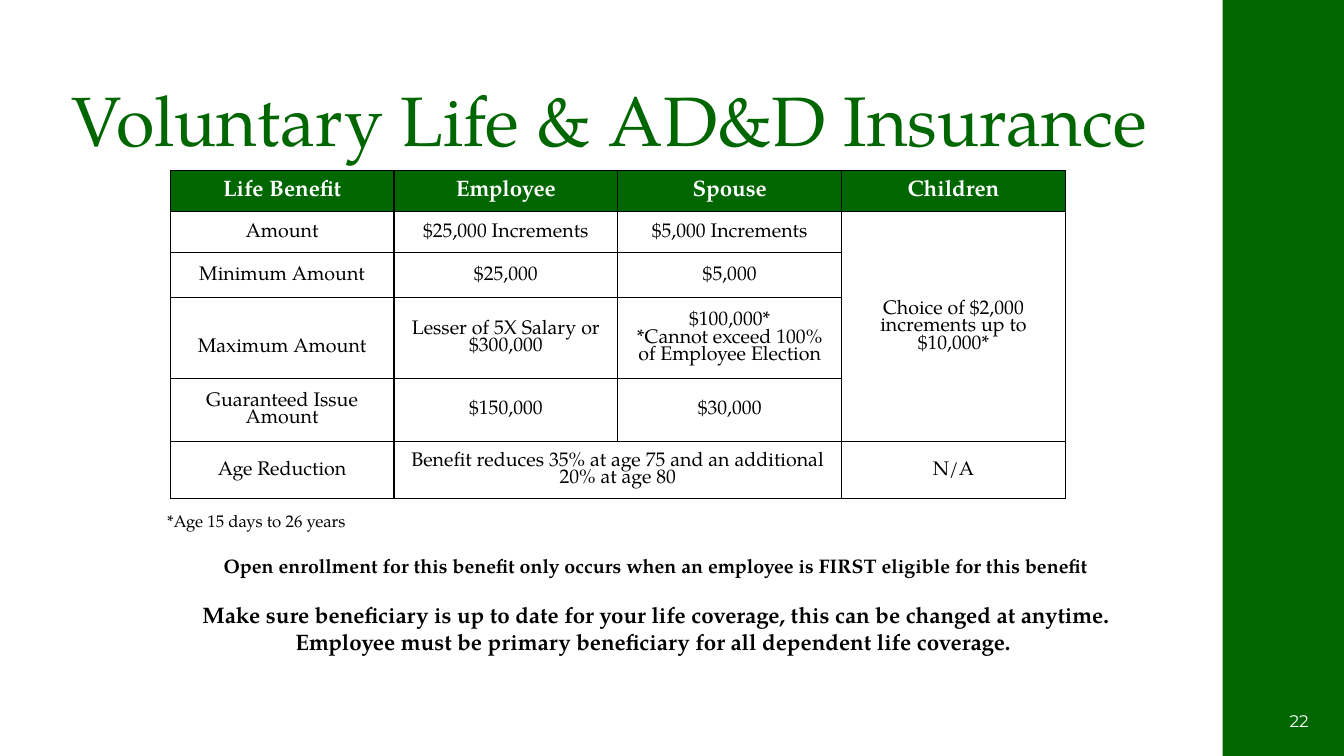
from lxml.etree import SubElement
from pptx import Presentation
from pptx.dml.color import RGBColor
from pptx.enum.shapes import MSO_SHAPE
from pptx.enum.text import MSO_ANCHOR, PP_ALIGN
from pptx.oxml.ns import qn
from pptx.util import Cm, Pt

SERIF, SANS = "TeX Gyre Pagella", "Montserrat"
GREEN, WHITE, BLACK = "006600", "FFFFFF", "000000"

COLUMN_WIDTH = 5.64
ROW_HEIGHTS = [1.04, 1.04, 1.13, 2.03, 1.59, 1.44]
BENEFITS = [
    ["Life Benefit", "Employee", "Spouse", "Children"],
    ["Amount", "$25,000 Increments", "$5,000 Increments",
     "Choice of $2,000 increments up to $10,000*"],
    ["Minimum Amount", "$25,000", "$5,000", ""],
    ["Maximum Amount", "Lesser of 5X Salary or $300,000",
     "$100,000*\n*Cannot exceed 100% of Employee Election", ""],
    ["Guaranteed Issue Amount", "$150,000", "$30,000", ""],
    ["Age Reduction",
     "Benefit reduces 35% at age 75 and an additional 20% at age 80", "", "N/A"],
]
MERGES = [((1, 3), (4, 3)), ((5, 1), (5, 2))]
MAXIMUM_ROW = 3


def color(value):
    return RGBColor.from_string(value)


def write(paragraph, text, size=14, font=SERIF, fill=BLACK, bold=False,
          align=PP_ALIGN.CENTER, spacing=None, before=0):
    paragraph.alignment = align
    paragraph.line_spacing = spacing
    paragraph.space_before = Pt(before)
    span = paragraph.add_run()
    span.text = text
    span.font.size = Pt(size)
    span.font.name = font
    span.font.bold = bold
    span.font.color.rgb = color(fill)


def add_side_band(page, left, top, width, height):
    band = page.shapes.add_shape(MSO_SHAPE.RECTANGLE, Cm(left), Cm(top),
                                 Cm(width), Cm(height))
    band.shadow.inherit = False
    band.fill.solid()
    band.fill.fore_color.rgb = color(GREEN)
    band.line.fill.background()


def add_title(page, left, top, width, height):
    title = page.shapes.title
    title.left, title.top = Cm(left), Cm(top)
    title.width, title.height = Cm(width), Cm(height)
    title.text_frame.word_wrap = True
    title.text_frame.vertical_anchor = MSO_ANCHOR.BOTTOM
    write(title.text_frame.paragraphs[0], "Voluntary Life & AD&D Insurance",
          size=50, fill=GREEN, spacing=0.9)


def add_text_frame(page, left, top, width, height, anchor=MSO_ANCHOR.TOP):
    box = page.shapes.add_textbox(Cm(left), Cm(top), Cm(width), Cm(height))
    box.text_frame.word_wrap = True
    box.text_frame.vertical_anchor = anchor
    return box.text_frame


def add_page_number(page, left, top, width, height):
    frame = add_text_frame(page, left, top, width, height, MSO_ANCHOR.MIDDLE)
    write(frame.paragraphs[0], "22", size=12, font=SANS, fill=WHITE,
          align=PP_ALIGN.RIGHT)


def add_notices(page, left, top, width, height):
    frame = add_text_frame(page, left, top, width, height)
    write(frame.paragraphs[0], "*Age 15 days to 26 years", size=12,
          align=PP_ALIGN.LEFT)
    write(frame.add_paragraph(),
          "Open enrollment for this benefit only occurs when an employee is "
          "FIRST eligible for this benefit", bold=True, before=16.5)
    write(frame.add_paragraph(),
          "Make sure beneficiary is up to date for your life coverage, this can "
          "be changed at anytime. Employee must be primary beneficiary for all "
          "dependent life coverage. ", size=16, bold=True, before=16.5)


def add_borders(cell):
    properties = cell._tc.get_or_add_tcPr()
    for side in ("a:lnL", "a:lnR", "a:lnT", "a:lnB"):
        line = SubElement(properties, qn(side), w=str(Pt(1)))
        fill = SubElement(line, qn("a:solidFill"))
        SubElement(fill, qn("a:srgbClr"), val=BLACK)


def format_cell(cell, text, is_header):
    add_borders(cell)
    cell.fill.solid()
    cell.fill.fore_color.rgb = color(GREEN if is_header else WHITE)
    cell.vertical_anchor = MSO_ANCHOR.MIDDLE
    if not text:
        return
    for index, line in enumerate(text.split("\n")):
        frame = cell.text_frame
        paragraph = frame.add_paragraph() if index else frame.paragraphs[0]
        write(paragraph, line, size=16 if is_header else 14, bold=is_header,
              fill=WHITE if is_header else BLACK, spacing=0.88)


def add_benefit_table(page, left, top):
    columns = len(BENEFITS[0])
    table = page.shapes.add_table(
        len(BENEFITS), columns, Cm(left), Cm(top),
        Cm(COLUMN_WIDTH * columns), Cm(sum(ROW_HEIGHTS))).table
    for column in table.columns:
        column.width = Cm(COLUMN_WIDTH)
    for row, height in zip(table.rows, ROW_HEIGHTS):
        row.height = Cm(height)
    for start, end in MERGES:
        table.cell(*start).merge(table.cell(*end))
    for row, texts in enumerate(BENEFITS):
        for column, text in enumerate(texts):
            format_cell(table.cell(row, column), text, is_header=row == 0)
    table.cell(MAXIMUM_ROW, 0).margin_top = Cm(0.6)


def main():
    deck = Presentation()
    deck.slide_width, deck.slide_height = Cm(33.87), Cm(19.05)
    page = deck.slides.add_slide(deck.slide_layouts[5])
    add_side_band(page, 30.81, 0, 3.06, 19.05)
    add_title(page, 1.37, 2, 27.99, 2.2)
    add_page_number(page, 30.66, 17.65, 2.57, 1.02)
    add_notices(page, 3.96, 12.75, 25.15, 4.01)
    add_benefit_table(page, 4.29, 4.29)
    deck.save("out.pptx")


if __name__ == "__main__":
    main()
